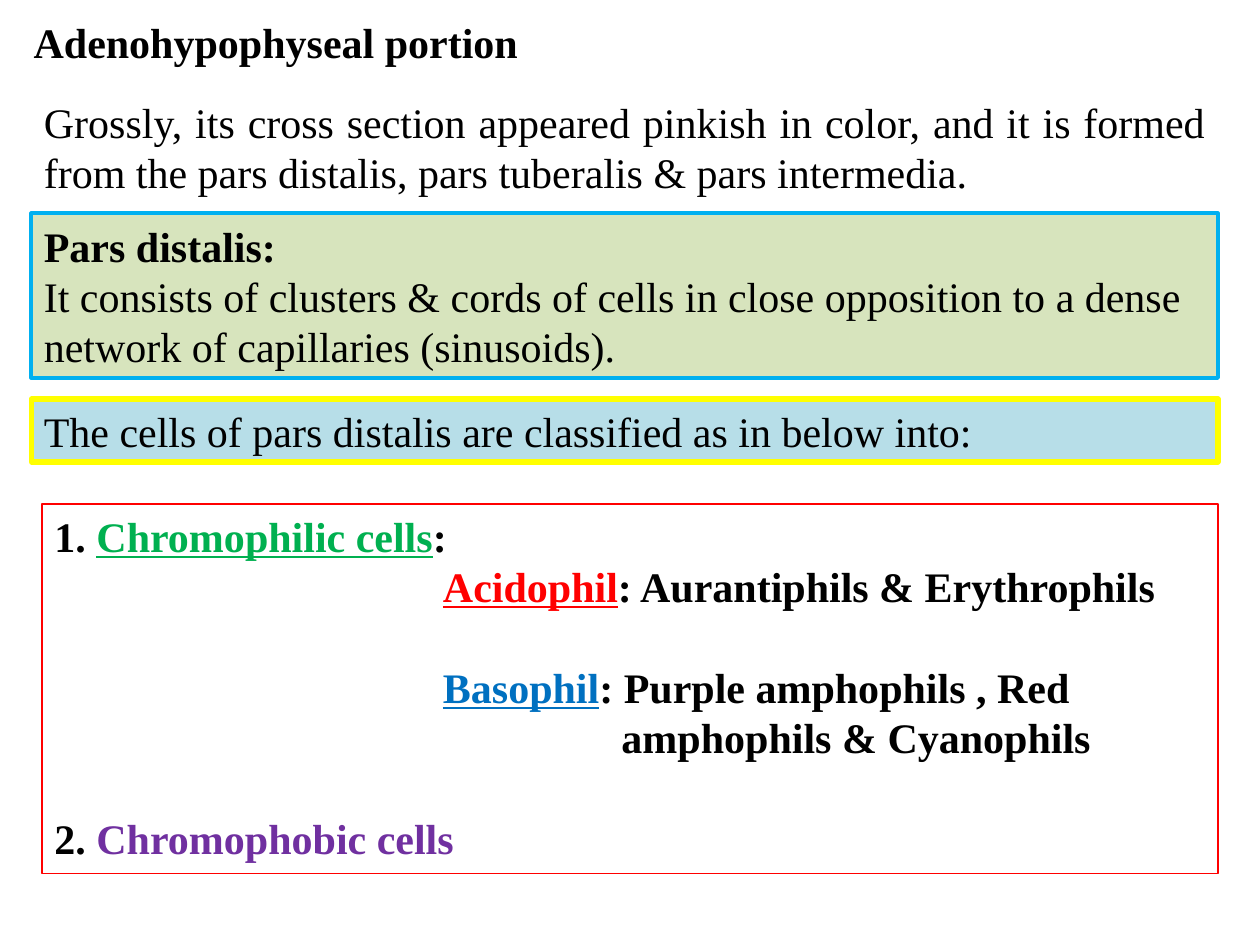
from pptx import Presentation
from pptx.dml.color import RGBColor
from pptx.enum.shapes import MSO_SHAPE
from pptx.enum.text import MSO_ANCHOR, MSO_AUTO_SIZE, PP_ALIGN
from pptx.util import Pt

HUES = {
    "ink": "000000", "lime": "D7E4BD", "sky": "00B0F0", "pale": "B7DEE8",
    "sun": "FFFF00", "red": "FF0000", "green": "00B050", "blue": "0070C0",
    "plum": "7030A0",
}
FONT = {"name": "Times New Roman", "size": Pt(24)}
LEFT, WIDE, LINE = 18, 678, 28.8

TITLE = [{"runs": [("Adenohypophyseal portion", "ink", True, False)]}]
INTRO = [{"runs": [("Grossly, its cross section appeared pinkish in color, and it is "
                    "formed from the pars distalis, pars tuberalis & pars intermedia.",
                    "ink", False, False)], "align": PP_ALIGN.JUSTIFY}]
PARS = [
    {"runs": [("Pars distalis:", "ink", True, False)]},
    {"runs": [("It consists of clusters & cords of cells in close opposition to a "
               "dense network of capillaries (sinusoids).", "ink", False, False)]},
]
CLASS = [{"runs": [("The cells of pars distalis are classified as in below into:",
                    "ink", False, False)]}]
CELLS = [
    {"runs": [("1. ", "ink", True, False), ("Chromophilic cells", "green", True, True),
              (":", "ink", True, False)]},
    {"runs": [("Acidophil", "red", True, True),
              (": Aurantiphils & Erythrophils", "ink", True, False)], "indent": 222},
    {"runs": [("Basophil", "blue", True, True),
              (": Purple amphophils , Red", "ink", True, False)],
     "indent": 222, "before": LINE},
    {"runs": [("amphophils & Cyanophils", "ink", True, False)], "indent": 324},
    {"runs": [("2.", "ink", True, False), (" Chromophobic cells", "plum", True, False)],
     "before": LINE},
]
BOXES = [
    (PARS, (LEFT, 122, WIDE, 94), "lime", "sky", 2.25, MSO_ANCHOR.MIDDLE),
    (CLASS, (LEFT, 228, WIDE, 36), "pale", "sun", 3, MSO_ANCHOR.MIDDLE),
    (CELLS, (24, 288, 672, 211), None, "red", 0.75, MSO_ANCHOR.TOP),
]


def color(key):
    return RGBColor.from_string(HUES[key])


def apply(obj, vals):
    for key, val in vals.items():
        setattr(obj, key, val)


def write(shape, paras, anchor=MSO_ANCHOR.MIDDLE):
    frame = shape.text_frame
    apply(frame, {"word_wrap": True, "auto_size": MSO_AUTO_SIZE.NONE,
                  "vertical_anchor": anchor})
    for num, item in enumerate(paras):
        para = frame.add_paragraph() if num else frame.paragraphs[0]
        apply(para, {"alignment": item.get("align", PP_ALIGN.LEFT),
                     "space_before": Pt(item.get("before", 0))})
        if "indent" in item:
            para._p.get_or_add_pPr().set("marL", str(Pt(item["indent"])))
        for text, hue, bold, under in item["runs"]:
            run = para.add_run()
            run.text = text
            apply(run.font, {**FONT, "bold": bold, "underline": under})
            run.font.color.rgb = color(hue)


deck = Presentation()
apply(deck, {"slide_width": Pt(720), "slide_height": Pt(540)})
slide = deck.slides.add_slide(deck.slide_layouts[5])

title = slide.shapes.title
apply(title, dict(zip(("left", "top", "width", "height"), map(Pt, (12, 6, 294, 36)))))
write(title, TITLE)

for paras, place, fill, edge, width, anchor in BOXES:
    box = slide.shapes.add_shape(MSO_SHAPE.RECTANGLE, *map(Pt, place))
    box.shadow.inherit = False
    if fill:
        box.fill.solid()
        box.fill.fore_color.rgb = color(fill)
    else:
        box.fill.background()
    box.line.color.rgb = color(edge)
    box.line.width = Pt(width)
    write(box, paras, anchor)

write(slide.shapes.add_textbox(*map(Pt, (LEFT, 51, WIDE, 65.5))), INTRO)

deck.save("out.pptx")
